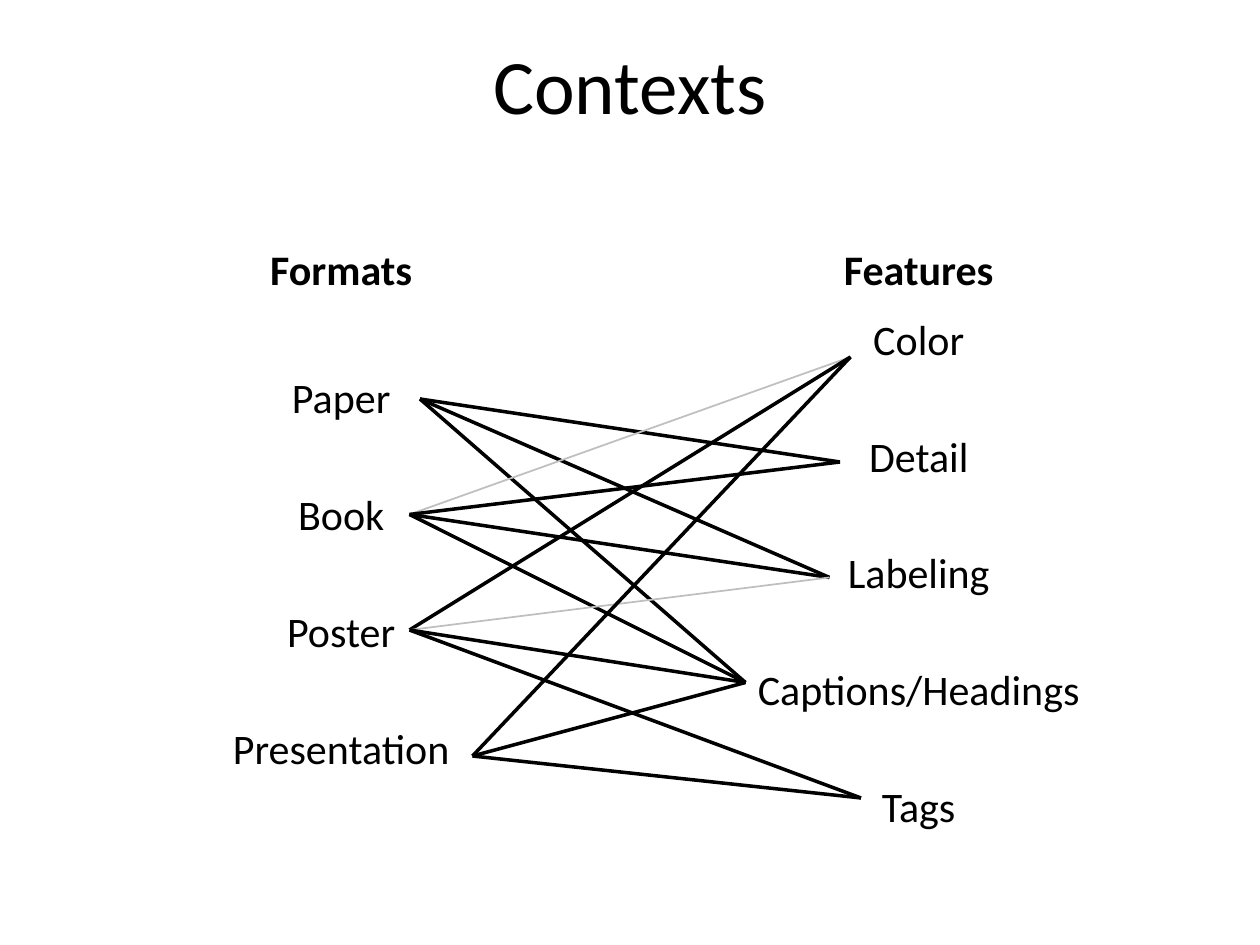
import pptx
import pptx.util
import pptx.dml.color
import pptx.enum.shapes
import pptx.enum.text
from lxml import etree

CELL = pptx.util.Inches(1) / 12  # the slide is 120 columns by 90 rows
ALIGN = pptx.enum.text.PP_ALIGN.CENTER
ANCHOR = pptx.enum.text.MSO_ANCHOR
THEME = {
    "font": "Calibri",
    "ink": "000000",
    "title": 44,
    "body": 24,
    "gap": 38,
    "strong": ("000000", 2),
    "weak": ("BFBFBF", 1),
}

FORMATS = {
    "Paper": (40, 38),
    "Book": (39, 49),
    "Poster": (39, 60),
    "Presentation": (45, 72),
}
FEATURES = {
    "Color": (81, 34),
    "Detail": (80, 44),
    "Labeling": (79, 55),
    "Captions/Headings": (71, 65),
    "Tags": (82, 76),
}
LINKS = {
    "Paper": ("Detail", "Labeling", "Captions/Headings"),
    "Book": ("Color", "Detail", "Labeling", "Captions/Headings"),
    "Poster": ("Color", "Labeling", "Captions/Headings", "Tags"),
    "Presentation": ("Color", "Tags", "Captions/Headings"),
}
WEAK = {("Book", "Color"), ("Poster", "Labeling")}


def cells(*counts):
    return [round(n * CELL) for n in counts]


def color(code):
    return pptx.dml.color.RGBColor.from_string(code)


def assign(item, values):
    for name, value in values.items():
        setattr(item, name, value)


def write(frame, lines, size, bold=False, gap=0, anchor=ANCHOR.MIDDLE):
    assign(frame, {"word_wrap": True, "vertical_anchor": anchor})
    frame.text = "\n".join(lines)
    for i, para in enumerate(frame.paragraphs):
        space = pptx.util.Pt(gap if i else 0)
        assign(para, {"alignment": ALIGN, "space_before": space})
        font = para.runs[0].font
        assign(font, {"name": THEME["font"], "size": pptx.util.Pt(size), "bold": bold})
        font.color.rgb = color(THEME["ink"])


def title(slide, box, text):
    shape = slide.shapes.title
    assign(shape, dict(zip(("left", "top", "width", "height"), cells(*box))))
    write(shape.text_frame, [text], THEME["title"])


def column(slide, box, head, items):
    """Place a bold heading above an evenly spaced list."""
    left, top, width, height = box
    bar = height * 0.14
    label = slide.shapes.add_textbox(*cells(left, top, width, bar))
    write(label.text_frame, [head], THEME["body"], bold=True, anchor=ANCHOR.BOTTOM)
    body = slide.shapes.add_textbox(*cells(left, top + bar, width, height - bar))
    write(body.text_frame, items, THEME["body"], gap=THEME["gap"])


def link(group, start, end, style):
    kind = pptx.enum.shapes.MSO_CONNECTOR.STRAIGHT
    line = group.shapes.add_connector(kind, *cells(*start, *end))
    ink, weight = style
    line.line.color.rgb = color(ink)
    line.line.width = pptx.util.Pt(weight)
    etree.SubElement(line.line._get_or_add_ln().getparent(),
                     pptx.oxml.ns.qn("a:effectLst"))


def web(slide):
    """Join each format to its features, one group per format."""
    for form, names in LINKS.items():
        group = slide.shapes.add_group_shape()
        for name in names:
            style = THEME["weak" if (form, name) in WEAK else "strong"]
            link(group, FORMATS[form], FEATURES[name], style)


def main():
    deck = pptx.Presentation()
    deck.slide_width, deck.slide_height = cells(120, 90)
    slide = deck.slides.add_slide(deck.slide_layouts[5])
    title(slide, (6, 2, 108, 12), "Contexts")
    column(slide, (6, 20.15, 53, 60.25), "Formats", FORMATS)
    column(slide, (61, 20.15, 53, 60.25), "Features", FEATURES)
    web(slide)
    deck.save("out.pptx")


if __name__ == "__main__":
    main()
